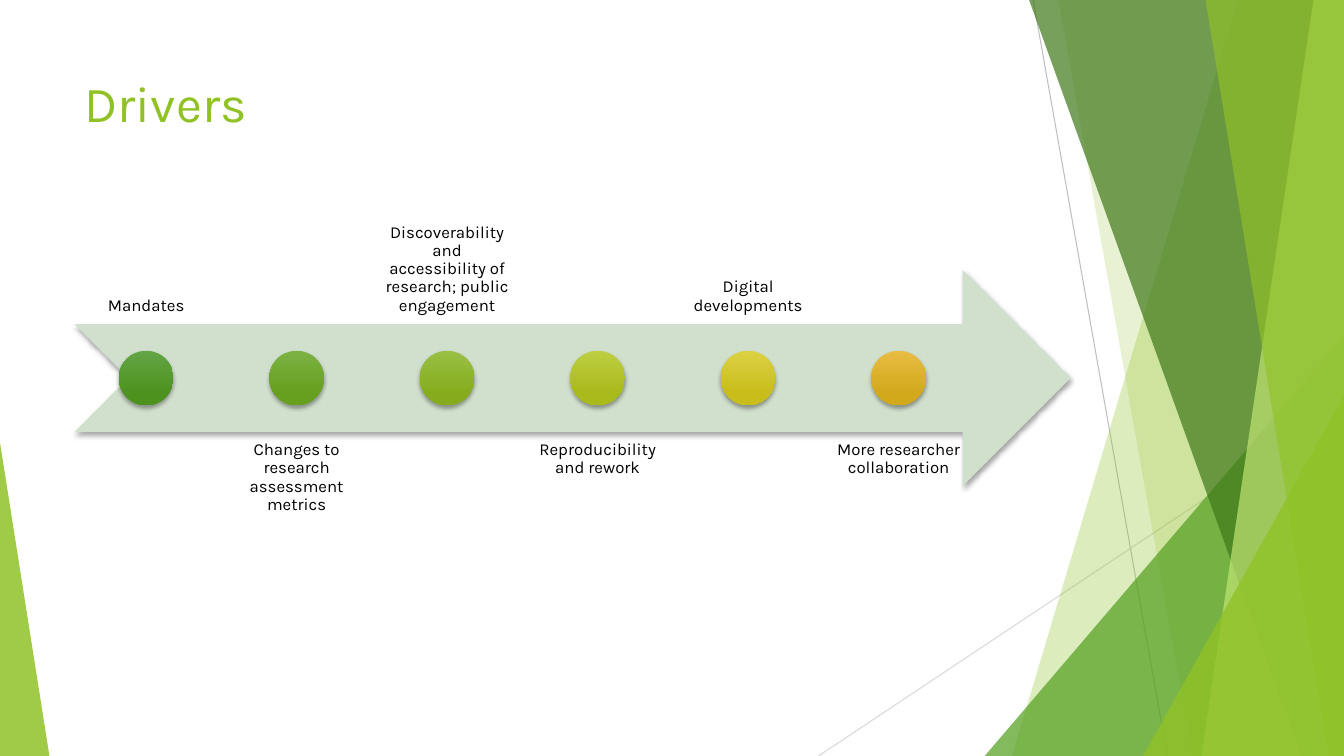
from dataclasses import dataclass

from lxml import etree
from pptx import Presentation
from pptx.dml.color import RGBColor
from pptx.enum.shapes import MSO_CONNECTOR, MSO_SHAPE
from pptx.enum.text import MSO_ANCHOR, PP_ALIGN
from pptx.oxml.ns import qn
from pptx.util import Pt

STRAIGHT = MSO_CONNECTOR.STRAIGHT
TRIANGLE = MSO_SHAPE.ISOSCELES_TRIANGLE
NOTCHED_ARROW = MSO_SHAPE.NOTCHED_RIGHT_ARROW
OVAL = MSO_SHAPE.OVAL
TOP, BOTTOM = MSO_ANCHOR.TOP, MSO_ANCHOR.BOTTOM
LEFT, CENTER = PP_ALIGN.LEFT, PP_ALIGN.CENTER

WIDTH, HEIGHT = 960, 540
ARROW_X, ARROW_Y, ARROW_W, ARROW_H = 53.3, 193, 711.4, 154
STEP, LABEL_W, DOT = 107.5, 102.2, 38.9

DRIVERS = [
    ("Mandates", "63A545", "4D921E"),
    ("Changes to research assessment metrics", "7BB244", "679F1E"),
    ("Discoverability and accessibility of research; public engagement", "99C044", "86AC1D"),
    ("Reproducibility and rework", "BDCE43", "A9BA1B"),
    ("Digital developments", "DCD143", "C8BD1A"),
    ("More researcher collaboration", "E7BC43", "D2A91B"),
]


@dataclass(frozen=True)
class Theme:
    """Colours, font and type sizes of the slide."""
    font: str = "Karla"
    title_size: int = 36
    label_size: int = 12
    lime: str = "90C226"
    green: str = "54A021"
    forest: str = "3F7819"
    pale: str = "C0E474"
    arrow: str = "D1DFCD"
    text: str = "000000"
    line_dark: str = "BFBFBF"
    line_light: str = "D9D9D9"


class Deck:
    """Draws styled elements on the current slide, with lengths in points."""

    def __init__(self, slide, theme):
        self.s, self.theme = slide, theme

    def line(self, x1, y1, x2, y2, color):
        """Draw a thin straight line."""
        sp = self.s.shapes.add_connector(STRAIGHT, Pt(x1), Pt(y1), Pt(x2), Pt(y2))
        sp.line.color.rgb = RGBColor.from_string(color)
        sp.line.width = Pt(0.75)
        etree.SubElement(sp._element.spPr, qn("a:effectLst"))

    def paint(self, sp, color, opacity=100):
        """Give a shape a flat fill without outline or shadow."""
        sp.shadow.inherit = False
        sp.line.fill.background()
        sp.fill.solid()
        sp.fill.fore_color.rgb = RGBColor.from_string(color)
        if opacity < 100:
            clr = sp._element.spPr.find(".//" + qn("a:srgbClr"))
            etree.SubElement(clr, qn("a:alpha"), val=str(opacity * 1000))

    def band(self, top_x, bottom_x, color, opacity):
        """Fill from a slanted left edge to the right side of the slide."""
        fb = self.s.shapes.build_freeform(Pt(top_x), 0)
        corners = [(WIDTH, 0), (WIDTH, HEIGHT), (bottom_x, HEIGHT)]
        fb.add_line_segments([(Pt(x), Pt(y)) for x, y in corners])
        self.paint(fb.convert_to_shape(), color, opacity)

    def shape(self, kind, x, y, w, h, color, opacity=100):
        """Add a filled preset shape."""
        sp = self.s.shapes.add_shape(kind, Pt(x), Pt(y), Pt(w), Pt(h))
        self.paint(sp, color, opacity)
        return sp

    def triangle(self, x, y, w, apex, color, opacity):
        """Add a triangle that stands on the bottom edge of the slide."""
        sp = self.shape(TRIANGLE, x, y, w, HEIGHT - y, color, opacity)
        sp.adjustments[0] = apex

    def shadow(self, sp):
        """Add a soft shadow below a shape."""
        effects = sp._element.spPr.find(qn("a:effectLst"))
        outer = etree.SubElement(effects, qn("a:outerShdw"), blurRad=str(Pt(3)),
                                 dist=str(Pt(2)), dir="5400000", rotWithShape="0")
        clr = etree.SubElement(outer, qn("a:srgbClr"), val="000000")
        etree.SubElement(clr, qn("a:alpha"), val="35000")

    def dot(self, cx, cy, light, dark):
        """Add a shaded round marker centred on a point."""
        sp = self.shape(OVAL, cx - DOT / 2, cy - DOT / 2, DOT, DOT, light)
        sp.fill.gradient()
        sp.fill.gradient_angle = 270
        for stop, position, color in zip(sp.fill.gradient_stops, (0, 0.78), (light, dark)):
            stop.position = position
            stop.color.rgb = RGBColor.from_string(color)
        self.shadow(sp)

    def text(self, text, x, y, w, h, size, color, anchor=TOP, align=LEFT,
             inset=(7.2, 3.6), spacing=1.0):
        """Add a wrapped text box."""
        tf = self.s.shapes.add_textbox(Pt(x), Pt(y), Pt(w), Pt(h)).text_frame
        tf.word_wrap = True
        tf.vertical_anchor = anchor
        tf.margin_left = tf.margin_right = Pt(inset[0])
        tf.margin_top = tf.margin_bottom = Pt(inset[1])
        tf.text = text
        p = tf.paragraphs[0]
        p.alignment = align
        p.line_spacing = spacing
        font = p.runs[0].font
        font.name, font.size = self.theme.font, Pt(size)
        font.color.rgb = RGBColor.from_string(color)


def main():
    """Build the slide and save it."""
    prs = Presentation()
    prs.slide_width, prs.slide_height = Pt(WIDTH), Pt(HEIGHT)
    t = Theme()
    deck = Deck(prs.slides.add_slide(prs.slide_layouts[6]), t)

    deck.line(738, 0, 833.8, HEIGHT, t.line_dark)
    deck.line(WIDTH, 290.2, 584.6, HEIGHT, t.line_light)
    deck.band(884.2, 722.9, t.lime, 30)
    deck.band(756, 851.8, t.lime, 20)
    deck.triangle(703.4, 239.8, 256.6, 1, t.green, 72)
    deck.band(735.1, 929.5, t.forest, 70)
    deck.band(938.2, 858.2, t.pale, 70)
    deck.band(861.1, 949, t.lime, 65)
    deck.triangle(816.5, 283, 143.5, 1, t.lime, 80)
    deck.triangle(0, 316.1, 35.3, 0, t.lime, 85)

    deck.text("Drivers", ARROW_X, 48, 676.8, 103.7, t.title_size, t.lime)

    deck.shadow(deck.shape(NOTCHED_ARROW, ARROW_X, ARROW_Y, ARROW_W, ARROW_H, t.arrow))
    shaft_top = ARROW_Y + ARROW_H / 4
    shaft_bottom = ARROW_Y + ARROW_H * 3 / 4
    for i, (label, light, dark) in enumerate(DRIVERS):
        x = ARROW_X + i * STEP
        y, anchor = (shaft_bottom, TOP) if i % 2 else (shaft_top - ARROW_H, BOTTOM)
        deck.text(label, x, y, LABEL_W, ARROW_H, t.label_size, t.text,
                  anchor, CENTER, (6.72, 6.72), 0.9)
        deck.dot(x + LABEL_W / 2, ARROW_Y + ARROW_H / 2, light, dark)

    prs.save("out.pptx")


if __name__ == "__main__":
    main()
